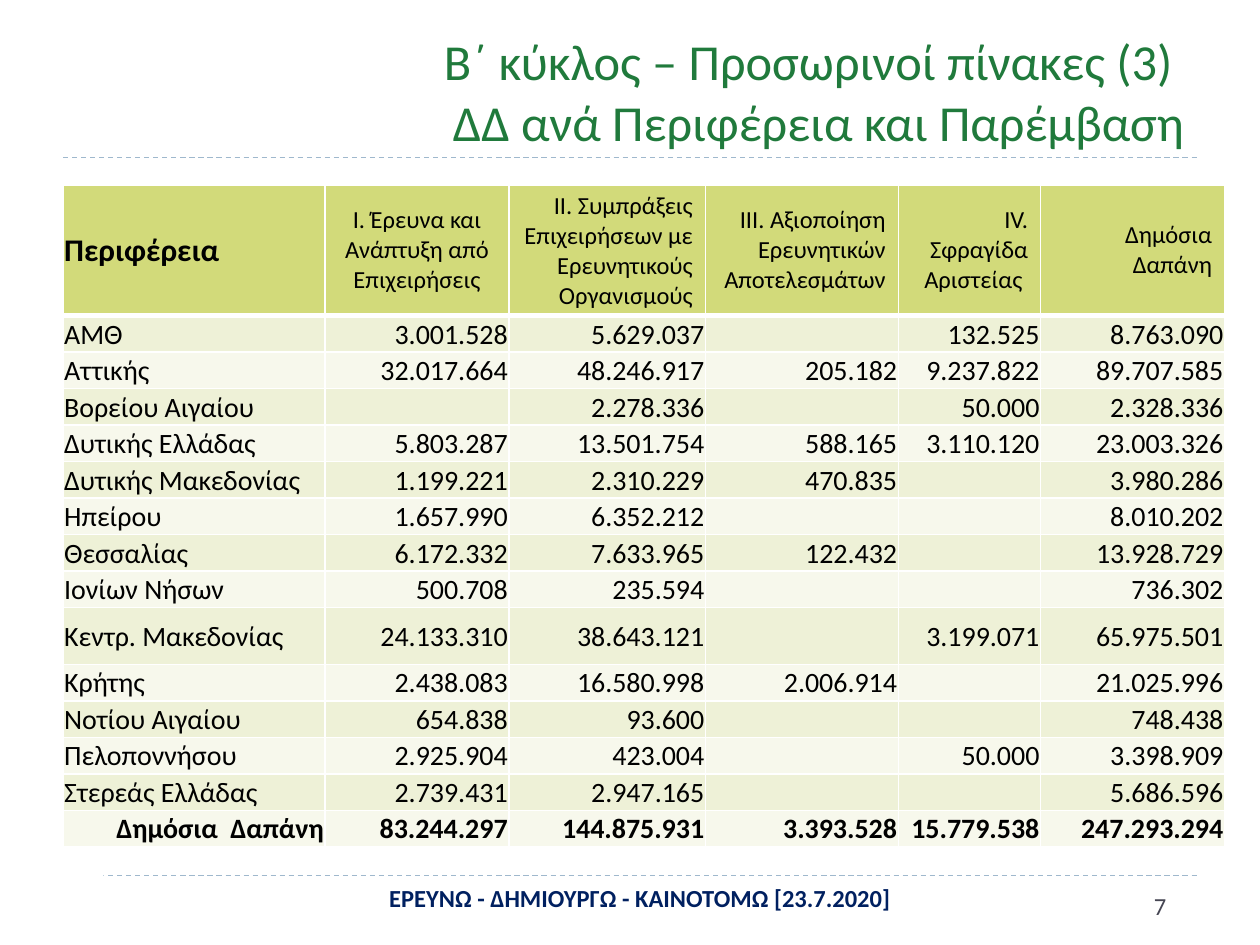
from lxml.etree import SubElement
from pptx import Presentation
from pptx.dml.color import RGBColor
from pptx.enum.dml import MSO_LINE
from pptx.enum.shapes import MSO_CONNECTOR, MSO_SHAPE
from pptx.enum.text import MSO_ANCHOR, MSO_AUTO_SIZE, PP_ALIGN
from pptx.oxml.ns import qn
from pptx.util import Inches, Pt

FONT = "Calibri"
BLACK = RGBColor(0x00, 0x00, 0x00)
WHITE = RGBColor(0xFF, 0xFF, 0xFF)
GREEN = RGBColor(0x20, 0x7A, 0x3C)
NAVY = RGBColor(0x00, 0x20, 0x60)
GREY = RGBColor(0x46, 0x46, 0x53)
RULE_BLUE = RGBColor(0x9F, 0xB8, 0xCD)
HEADER_FILL = RGBColor(0xD2, 0xDA, 0x7A)
BAND_FILLS = (RGBColor(0xF7, 0xF8, 0xEC), RGBColor(0xEE, 0xF1, 0xD7))

COLUMN_WIDTHS = (2.08, 1.46, 1.56, 1.53, 1.13, 1.46)
HEADER_HEIGHT, ROW_HEIGHT, TALL_HEIGHT = 0.96, 0.29, 0.45
TALL_REGION = "Κεντρ. Μακεδονίας"
HEADINGS = (
    "Περιφέρεια",
    "I. Έρευνα και Ανάπτυξη από Επιχειρήσεις",
    "II. Συμπράξεις Επιχειρήσεων με Ερευνητικούς Οργανισμούς",
    "III. Αξιοποίηση Ερευνητικών Αποτελεσμάτων",
    "IV. Σφραγίδα Αριστείας ",
    "Δημόσια Δαπάνη",
)
REGIONS = (
    ("ΑΜΘ", "3.001.528", "5.629.037", "", "132.525", "8.763.090"),
    ("Αττικής", "32.017.664", "48.246.917", "205.182", "9.237.822", "89.707.585"),
    ("Βορείου Αιγαίου", "", "2.278.336", "", "50.000", "2.328.336"),
    ("Δυτικής Ελλάδας", "5.803.287", "13.501.754", "588.165", "3.110.120", "23.003.326"),
    ("Δυτικής Μακεδονίας", "1.199.221", "2.310.229", "470.835", "", "3.980.286"),
    ("Ηπείρου", "1.657.990", "6.352.212", "", "", "8.010.202"),
    ("Θεσσαλίας", "6.172.332", "7.633.965", "122.432", "", "13.928.729"),
    ("Ιονίων Νήσων", "500.708", "235.594", "", "", "736.302"),
    (TALL_REGION, "24.133.310", "38.643.121", "", "3.199.071", "65.975.501"),
    ("Κρήτης", "2.438.083", "16.580.998", "2.006.914", "", "21.025.996"),
    ("Νοτίου Αιγαίου", "654.838", "93.600", "", "", "748.438"),
    ("Πελοποννήσου", "2.925.904", "423.004", "", "50.000", "3.398.909"),
    ("Στερεάς Ελλάδας", "2.739.431", "2.947.165", "", "", "5.686.596"),
)
TOTALS = ("Δημόσια  Δαπάνη", "83.244.297", "144.875.931", "3.393.528",
          "15.779.538", "247.293.294")


def add_span(para, text, size, color, bold=False):
    span = para.add_run()
    span.text = text
    font = span.font
    font.name, font.size, font.bold = FONT, Pt(size), bold
    font.color.rgb = color


def add_rule(slide, left, top, width):
    rule = slide.shapes.add_connector(
        MSO_CONNECTOR.STRAIGHT, Inches(left), Inches(top),
        Inches(left + width), Inches(top))
    rule.line.color.rgb = RULE_BLUE
    rule.line.width = Pt(0.75)
    rule.line.dash_style = MSO_LINE.DASH
    SubElement(rule._element.spPr, qn("a:effectLst"))


def add_corner(slide, left, top, width, height):
    corner = slide.shapes.add_shape(
        MSO_SHAPE.RECTANGLE, Inches(left), Inches(top), Inches(width), Inches(height))
    corner.shadow.inherit = False
    corner.fill.solid()
    corner.fill.fore_color.rgb = WHITE
    corner.line.fill.background()


def place_title(slide, left, top, width, height):
    title = slide.shapes.title
    title.left, title.top = Inches(left), Inches(top)
    title.width, title.height = Inches(width), Inches(height)
    frame = title.text_frame
    frame.auto_size = MSO_AUTO_SIZE.NONE
    frame.vertical_anchor = MSO_ANCHOR.BOTTOM
    para = frame.paragraphs[0]
    para.alignment = PP_ALIGN.RIGHT
    add_span(para, "Β΄ κύκλος – Προσωρινοί πίνακες (3) ", 28.8, GREEN)
    para.add_line_break()
    add_span(para, "ΔΔ ανά Περιφέρεια και Παρέμβαση", 28.8, GREEN)


def add_footer_text(slide, left, top, width, height, text, color, align, bold=False):
    box = slide.shapes.add_textbox(
        Inches(left), Inches(top), Inches(width), Inches(height))
    box.text_frame.word_wrap = True
    para = box.text_frame.paragraphs[0]
    para.alignment = align
    add_span(para, text, 14, color, bold)


def set_borders(cell, **widths):
    properties = cell._tc.get_or_add_tcPr()
    for side in "LRTB":
        edge = SubElement(properties, qn(f"a:ln{side}"),
                          w=str(Pt(widths.get(side, 1))))
        fill = SubElement(edge, qn("a:solidFill"))
        SubElement(fill, qn("a:srgbClr"), val=str(WHITE))


def fill_cell(cell, text, size, fill, align, bold=False, roomy=False):
    cell.fill.solid()
    cell.fill.fore_color.rgb = fill
    cell.vertical_anchor = MSO_ANCHOR.MIDDLE
    side, top, bottom = (0.1, 0.05, 0.05) if roomy else (0.01, 0.01, 0)
    cell.margin_left = cell.margin_right = Inches(side)
    cell.margin_top, cell.margin_bottom = Inches(top), Inches(bottom)
    para = cell.text_frame.paragraphs[0]
    para.alignment = align
    if text:
        add_span(para, text, size, BLACK, bold)
    else:
        # Keeps an empty cell from stretching its row
        SubElement(para._p, qn("a:endParaRPr"), sz=str(size * 100))


def add_spending_table(slide, left, top):
    rows = (*REGIONS, TOTALS)
    heights = [HEADER_HEIGHT] + [
        TALL_HEIGHT if row[0] == TALL_REGION else ROW_HEIGHT for row in rows]
    table = slide.shapes.add_table(
        len(heights), len(COLUMN_WIDTHS), Inches(left), Inches(top),
        Inches(sum(COLUMN_WIDTHS)), Inches(sum(heights))).table
    for column, width in zip(table.columns, COLUMN_WIDTHS):
        column.width = Inches(width)
    for row, height in zip(table.rows, heights):
        row.height = Inches(height)

    # Heading row
    for index, heading in enumerate(HEADINGS):
        cell = table.cell(0, index)
        set_borders(cell, B=3)
        first = index == 0
        align = (PP_ALIGN.LEFT, PP_ALIGN.CENTER)[index] if index < 2 else PP_ALIGN.RIGHT
        fill_cell(cell, heading, 18 if first else 14, HEADER_FILL, align,
                  bold=first, roomy=not first)

    # Regions and totals
    for number, row in enumerate(rows, start=1):
        total = row is TOTALS
        for index, text in enumerate(row):
            cell = table.cell(number, index)
            set_borders(cell, T=3 if number == 1 else 1)
            align = PP_ALIGN.RIGHT if index or total else PP_ALIGN.LEFT
            fill_cell(cell, text, 16, BAND_FILLS[number % 2], align, bold=total)


def main():
    deck = Presentation()
    deck.slide_width, deck.slide_height = Inches(10), Inches(7.5)
    page = deck.slides.add_slide(deck.slide_layouts[5])

    # Dashed rules and the white corner over the lower one
    for top in (6.95, 1.25):
        add_rule(page, 0.5, top, 9)
    add_corner(page, 0.43, 6.85, 0.39, 0.44)

    place_title(page, 1.22, 0.17, 8.28, 1.08)

    # Footer and page number
    add_footer_text(page, 2.01, 6.96, 6.14, 0.33,
                    "ΕΡΕΥΝΩ - ΔΗΜΙΟΥΡΓΩ - ΚΑΙΝΟΤΟΜΩ [23.7.2020]",
                    NAVY, PP_ALIGN.CENTER, bold=True)
    add_footer_text(page, 9.06, 7.02, 0.5, 0.4, "7", GREY, PP_ALIGN.LEFT)

    add_spending_table(page, 0.5, 1.47)
    deck.save("out.pptx")


if __name__ == "__main__":
    main()
